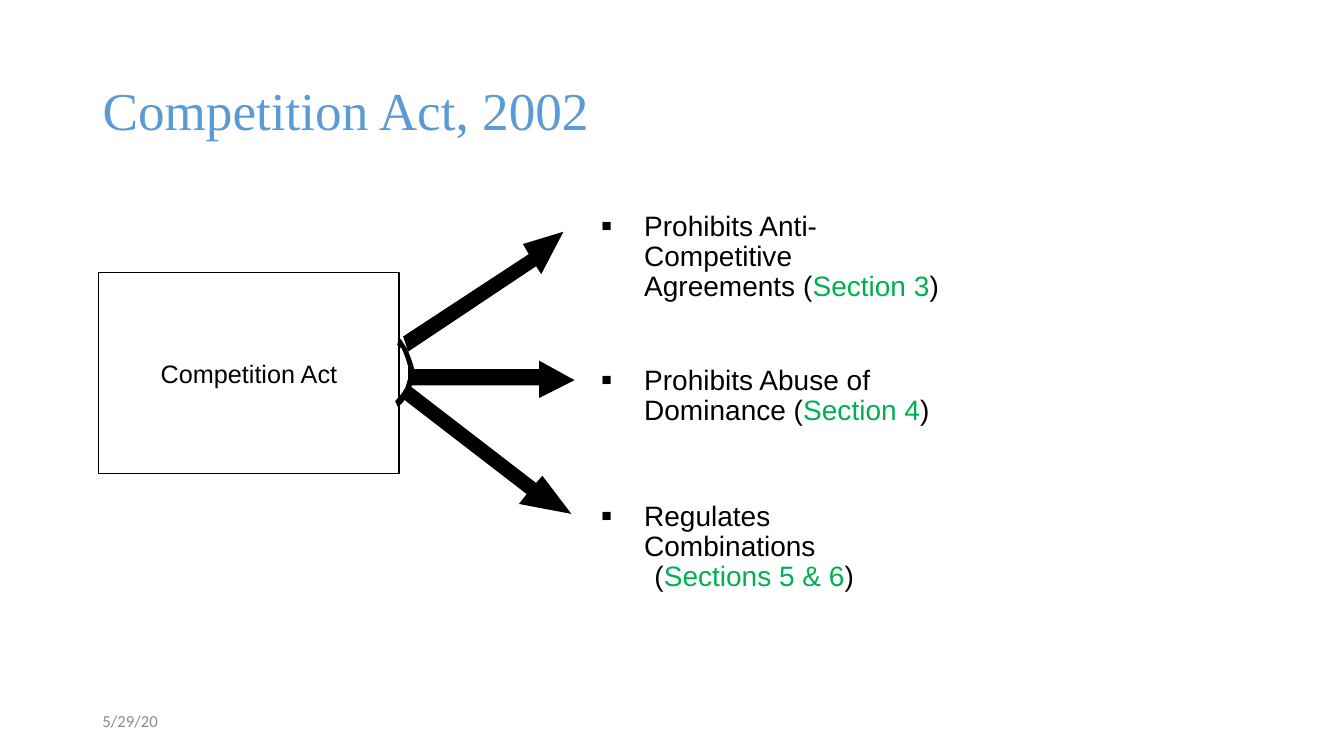
from dataclasses import dataclass

from lxml.etree import SubElement
from pptx import Presentation
from pptx.dml.color import RGBColor
from pptx.enum.shapes import MSO_SHAPE
from pptx.enum.text import MSO_ANCHOR, MSO_AUTO_SIZE, PP_ALIGN
from pptx.oxml.ns import qn
from pptx.util import Cm, Pt


@dataclass(frozen=True)
class Theme:
    ink: RGBColor = RGBColor(0x00, 0x00, 0x00)
    heading: RGBColor = RGBColor(0x5B, 0x9B, 0xD5)
    section: RGBColor = RGBColor(0x00, 0xB0, 0x50)
    muted: RGBColor = RGBColor(0x8C, 0x8C, 0x8C)
    heading_font: str = "Times New Roman"
    text_font: str = "Arial"
    date_font: str = "Calibri"
    heading_size: Pt = Pt(38)
    provision_size: Pt = Pt(20)
    act_size: Pt = Pt(18)
    date_size: Pt = Pt(12)


THEME = Theme()

# Lead-in, section reference, space after, bulleted
PROVISIONS = [
    ("Prohibits Anti-Competitive Agreements (", "Section 3", 45.4, True),
    ("Prohibits Abuse of Dominance (", "Section 4", 54, True),
    ("Regulates Combinations", "", 0, True),
    ("(", "Sections 5 & 6", 0, False),
]

# Outlines in centimetres on the slide
ARROW_OUTLINES = [
    [(10.16, 8.48), (10.29, 8.86), (13.51, 6.71), (13.41, 6.35)],
    [(13.41, 6.55), (13.18, 6.15), (14.2, 5.84), (13.64, 6.91)],
    [(13.59, 9.09), (14.48, 9.58), (13.59, 10.03)],
    [(10.34, 9.73), (10.13, 10.03), (13.56, 12.67), (13.77, 12.37)],
    [(13.36, 12.34), (13.67, 11.99), (14.4, 12.95), (13.08, 12.7)],
]
HUB_OUTLINES = [
    [(10.41, 9.19), (10.36, 9.04), (10.26, 8.79), (10.11, 8.56), (10.06, 8.51),
     (10.01, 8.69), (10.13, 8.79), (10.21, 8.99), (10.26, 9.14), (10.29, 9.25)],
    [(10.31, 9.88), (10.41, 9.65), (10.44, 9.45), (10.44, 9.3), (10.41, 9.19),
     (10.29, 9.25), (10.29, 9.53), (10.24, 9.7), (10.21, 9.78)],
    [(10.03, 10.26), (10.16, 10.13), (10.26, 9.98), (10.31, 9.88),
     (10.21, 9.78), (10.13, 9.91), (10.03, 10.03), (9.96, 10.11)],
]


def apply(target, formats):
    for attribute, setting in formats.items():
        setattr(target, attribute, setting)


def place(element, left, top, width, height):
    apply(element, {"left": Cm(left), "top": Cm(top),
                    "width": Cm(width), "height": Cm(height)})


def add_run(paragraph, words, font, size, color):
    run = paragraph.add_run()
    run.text = words
    apply(run.font, {"name": font, "size": size})
    run.font.color.rgb = color


def write_line(element, words, font, size, color, align=PP_ALIGN.LEFT):
    """Fill an element with one vertically centred line of text."""
    frame = element.text_frame
    apply(frame, {"word_wrap": True, "auto_size": MSO_AUTO_SIZE.NONE,
                  "vertical_anchor": MSO_ANCHOR.MIDDLE})
    paragraph = frame.paragraphs[0]
    paragraph.alignment = align
    add_run(paragraph, words, font, size, color)


def set_bullet(paragraph, bulleted):
    properties = paragraph._p.get_or_add_pPr()
    margin, hanging = (Cm(1.07), Cm(-1.07)) if bulleted else (Cm(1.33), 0)
    properties.set("marL", str(margin))
    properties.set("indent", str(hanging))
    if bulleted:
        SubElement(properties, qn("a:buSzPct"), val="60000")
        SubElement(properties, qn("a:buFont"), typeface=THEME.text_font)
        SubElement(properties, qn("a:buChar"), char="■")
    else:
        SubElement(properties, qn("a:buNone"))


def write_provisions(body):
    frame = body.text_frame
    apply(frame, {"word_wrap": True, "auto_size": MSO_AUTO_SIZE.NONE,
                  "vertical_anchor": MSO_ANCHOR.TOP})
    for index, (lead, section, gap, bulleted) in enumerate(PROVISIONS):
        paragraph = frame.add_paragraph() if index else frame.paragraphs[0]
        apply(paragraph, {"level": 1, "alignment": PP_ALIGN.LEFT,
                          "line_spacing": 0.9, "space_before": Pt(0),
                          "space_after": Pt(gap)})
        set_bullet(paragraph, bulleted)
        pieces = [(lead, THEME.ink)]
        if section:
            pieces += [(section, THEME.section), (")", THEME.ink)]
        for words, color in pieces:
            add_run(paragraph, words, THEME.text_font, THEME.provision_size, color)


def add_act_box(shapes):
    act = shapes.add_shape(MSO_SHAPE.FLOWCHART_PROCESS,
                           Cm(2.49), Cm(6.86), Cm(7.57), Cm(5.08))
    act.shadow.inherit = False
    act.fill.background()
    act.line.color.rgb = THEME.ink
    act.line.width = Pt(1)
    write_line(act, "Competition Act", THEME.text_font, THEME.act_size,
               THEME.ink, PP_ALIGN.CENTER)


def paint_solid(part):
    part.shadow.inherit = False
    part.fill.solid()
    part.fill.fore_color.rgb = THEME.ink
    part.line.fill.background()


def add_arrows(shapes):
    """Draw the three arrows and the curved hub they leave from, as one group."""
    arrows = shapes.add_group_shape().shapes
    paint_solid(arrows.add_shape(MSO_SHAPE.RECTANGLE,
                                 Cm(10.34), Cm(9.3), Cm(3.45), Cm(0.41)))
    for outline in ARROW_OUTLINES + HUB_OUTLINES:
        start, *corners = [(Cm(x), Cm(y)) for x, y in outline]
        builder = arrows.build_freeform(*start)
        builder.add_line_segments(corners, close=True)
        paint_solid(builder.convert_to_shape())


def main():
    deck = Presentation()
    apply(deck, {"slide_width": Cm(33.87), "slide_height": Cm(19.05)})
    slide = deck.slides.add_slide(deck.slide_layouts[1])
    shapes = slide.shapes

    heading = shapes.title
    place(heading, 2.33, 1.01, 29.21, 3.68)
    write_line(heading, "Competition Act, 2002", THEME.heading_font,
               THEME.heading_size, THEME.heading)
    heading.text_frame.paragraphs[0].line_spacing = 0.9

    provisions = slide.placeholders[1]
    place(provisions, 14.91, 5.21, 9.2, 10.67)
    write_provisions(provisions)

    date = shapes.add_textbox(Cm(2.33), Cm(17.66), Cm(7.62), Cm(1.01))
    write_line(date, "5/29/20", THEME.date_font, THEME.date_size, THEME.muted)

    add_act_box(shapes)
    add_arrows(shapes)
    deck.save("out.pptx")


if __name__ == "__main__":
    main()
